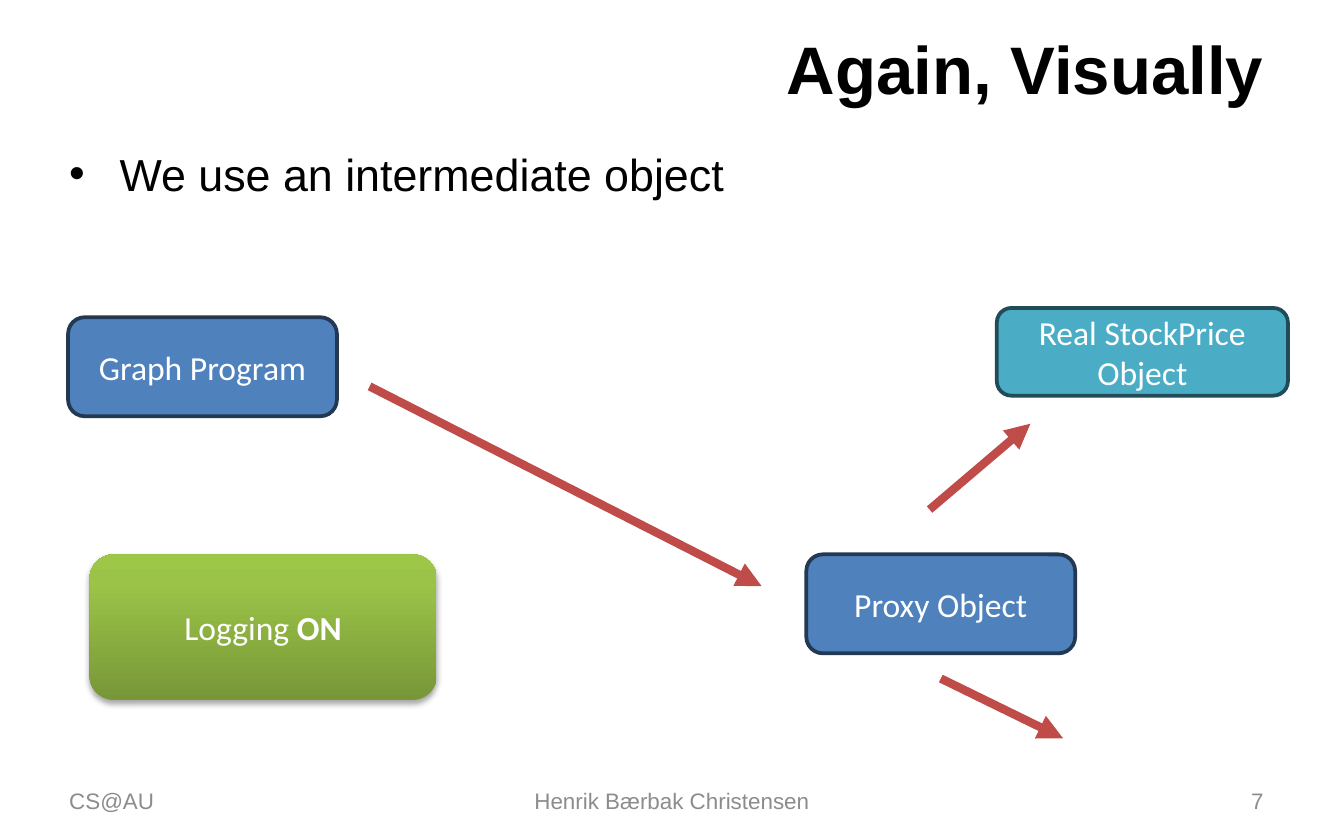
from lxml import etree
from pptx import Presentation
from pptx import util as u
from pptx.dml.color import RGBColor
from pptx.enum import shapes, text
from pptx.oxml.ns import qn

COLOURS = {
    "ink": "000000",
    "muted": "8C8C8C",
    "white": "FFFFFF",
    "blue": "4F81BD",
    "blue_edge": "233953",
    "teal": "4BACC6",
    "teal_edge": "214B57",
    "arrow": "BF4C48",
    "green_dark": "779737",
    "green_mid": "9BC348",
    "green_light": "9DC746",
}
ALIGN = text.PP_ALIGN
ANCHOR = text.MSO_ANCHOR


def rgb(name):
    return RGBColor.from_string(COLOURS[name])


def child(parent, tag, **attributes):
    element = etree.SubElement(parent, qn(tag))
    for key, value in attributes.items():
        element.set(key, str(value))
    return element


def apply(target, formats):
    for key, value in formats.items():
        setattr(target, key, value)


class SlideBuilder:
    text_font = "Arial"
    box_font = "Calibri"
    box_size = 18
    edge_width = 2
    arrow_width = 4.5

    def __init__(self, slide):
        self.slide = slide

    def words(self, paragraph, wording, font, size, colour, bold=False):
        for index, line in enumerate(wording.split("\n")):
            if index:
                paragraph.add_line_break()
            run = paragraph.add_run()
            run.text = line
            apply(run.font, {"name": font, "size": u.Pt(size), "bold": bold})
            run.font.color.rgb = rgb(colour)

    def label(self, area, wording, size, colour="ink", align=ALIGN.LEFT,
              anchor=ANCHOR.MIDDLE, bold=False, bullet_indent=0):
        frame = self.slide.shapes.add_textbox(*map(u.Pt, area)).text_frame
        apply(frame, {"word_wrap": True, "vertical_anchor": anchor})
        paragraph = frame.paragraphs[0]
        paragraph.alignment = align
        if bullet_indent:
            properties = paragraph._p.get_or_add_pPr()
            properties.set("marL", str(u.Pt(bullet_indent)))
            properties.set("indent", str(-u.Pt(bullet_indent)))
            child(properties, "a:buFont", typeface=self.text_font)
            child(properties, "a:buChar", char="•")
        self.words(paragraph, wording, self.text_font, size, colour, bold)

    def box(self, area, parts, fill=None, edge=None):
        box = self.slide.shapes.add_shape(
            shapes.MSO_SHAPE.ROUNDED_RECTANGLE, *map(u.Pt, area))
        box.shadow.inherit = False
        if fill:
            box.fill.solid()
            box.fill.fore_color.rgb = rgb(fill)
        if edge:
            box.line.color.rgb = rgb(edge)
            box.line.width = u.Pt(self.edge_width)
        else:
            box.line.fill.background()
        frame = box.text_frame
        apply(frame, {"word_wrap": True, "vertical_anchor": ANCHOR.MIDDLE})
        paragraph = frame.paragraphs[0]
        paragraph.alignment = ALIGN.CENTER
        for wording, bold in parts:
            self.words(paragraph, wording, self.box_font, self.box_size, "white", bold)
        return box

    def raised_box(self, area, parts, stops):
        box = self.box(area, parts)
        box.fill.gradient()
        box.fill.gradient_angle = 90
        properties = box._element.spPr
        stop_list = properties.find(".//" + qn("a:gsLst"))
        for old in list(stop_list):
            stop_list.remove(old)
        for percent, colour in stops:
            stop = child(stop_list, "a:gs", pos=percent * 1000)
            child(stop, "a:srgbClr", val=COLOURS[colour])
        shadow = child(properties.find(qn("a:effectLst")), "a:outerShdw",
                       blurRad=u.Pt(3.1), dist=u.Pt(1.8), dir=90 * 60000,
                       rotWithShape=0)
        tint = child(shadow, "a:srgbClr", val=COLOURS["ink"])
        child(tint, "a:alpha", val=35000)

    def arrow(self, start, end):
        arrow = self.slide.shapes.add_connector(
            shapes.MSO_CONNECTOR.STRAIGHT, *map(u.Pt, start + end))
        arrow.line.color.rgb = rgb("arrow")
        arrow.line.width = u.Pt(self.arrow_width)
        properties = arrow._element.spPr
        child(properties.find(qn("a:ln")), "a:tailEnd", type="triangle")
        child(properties, "a:effectLst")


def main():
    deck = Presentation()
    apply(deck, {"slide_width": u.Pt(720), "slide_height": u.Pt(450)})
    builder = SlideBuilder(deck.slides.add_slide(deck.slide_layouts[6]))

    builder.label((36, 13, 648, 47), "Again, Visually", 36,
                  align=ALIGN.RIGHT, bold=True)
    builder.label((30, 75, 654, 340), "We use an intermediate object", 24,
                  anchor=ANCHOR.TOP, bullet_indent=27)

    footers = [
        (30, 168, "CS@AU", ALIGN.LEFT),
        (246, 228, "Henrik Bærbak Christensen", ALIGN.CENTER),
        (516, 168, "7", ALIGN.RIGHT),
    ]
    for left, width, wording, align in footers:
        builder.label((left, 417, width, 24), wording, 12, "muted", align)

    builder.box((534, 165, 156, 47), [("Real StockPrice\nObject", False)],
                "teal", "teal_edge")
    for left, top, wording in [(36.5, 170, "Graph Program"),
                               (432, 297, "Proxy Object")]:
        builder.box((left, top, 144, 53), [(wording, False)], "blue", "blue_edge")
    builder.raised_box((48, 297, 186, 78), [("Logging ", False), ("ON", True)],
                       [(0, "green_dark"), (80, "green_mid"), (100, "green_light")])

    for start, end in [((498, 273), (552, 227)),
                       ((198, 207), (408, 314)),
                       ((504, 363.5), (569.5, 395.5))]:
        builder.arrow(start, end)

    deck.save("out.pptx")


if __name__ == "__main__":
    main()
